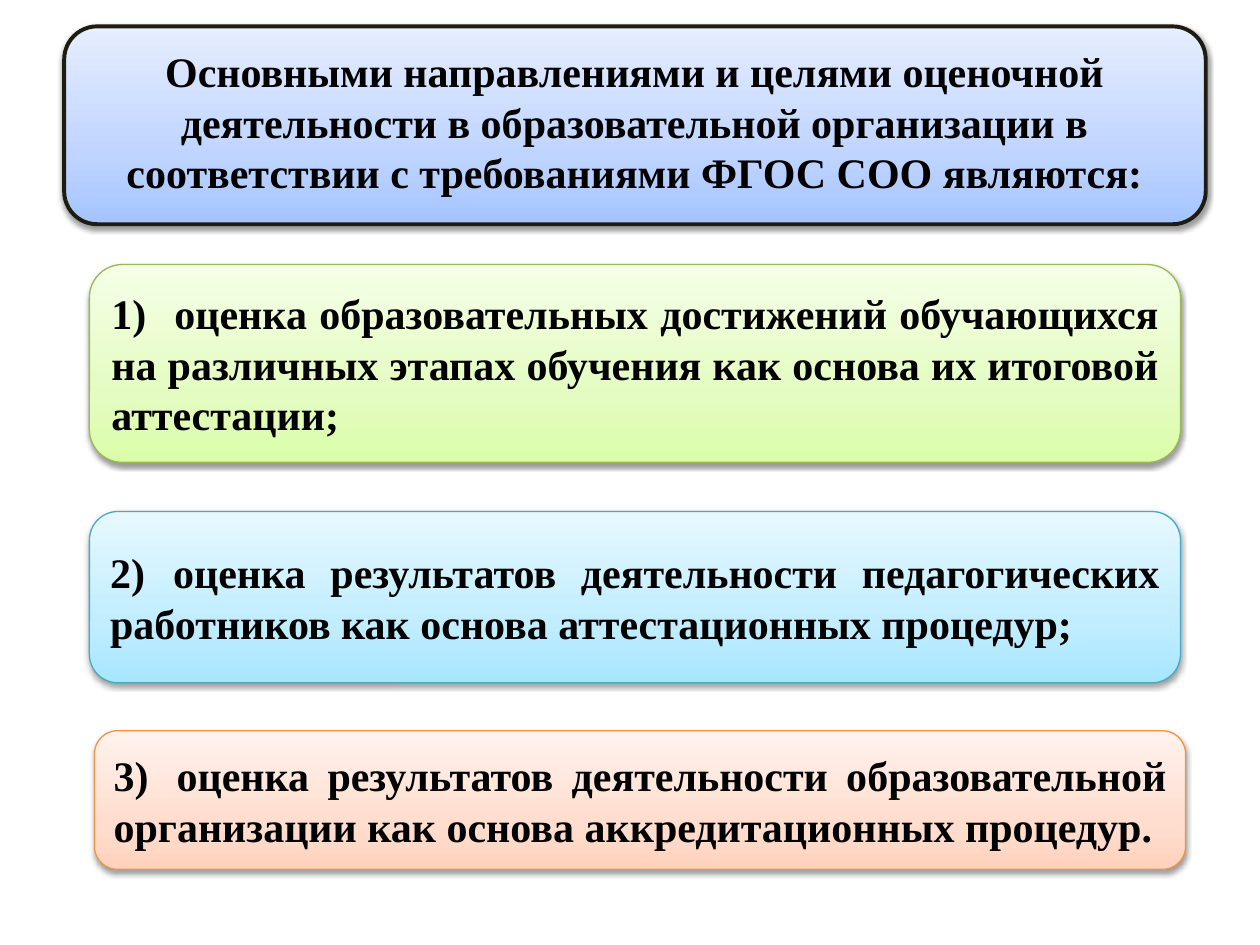
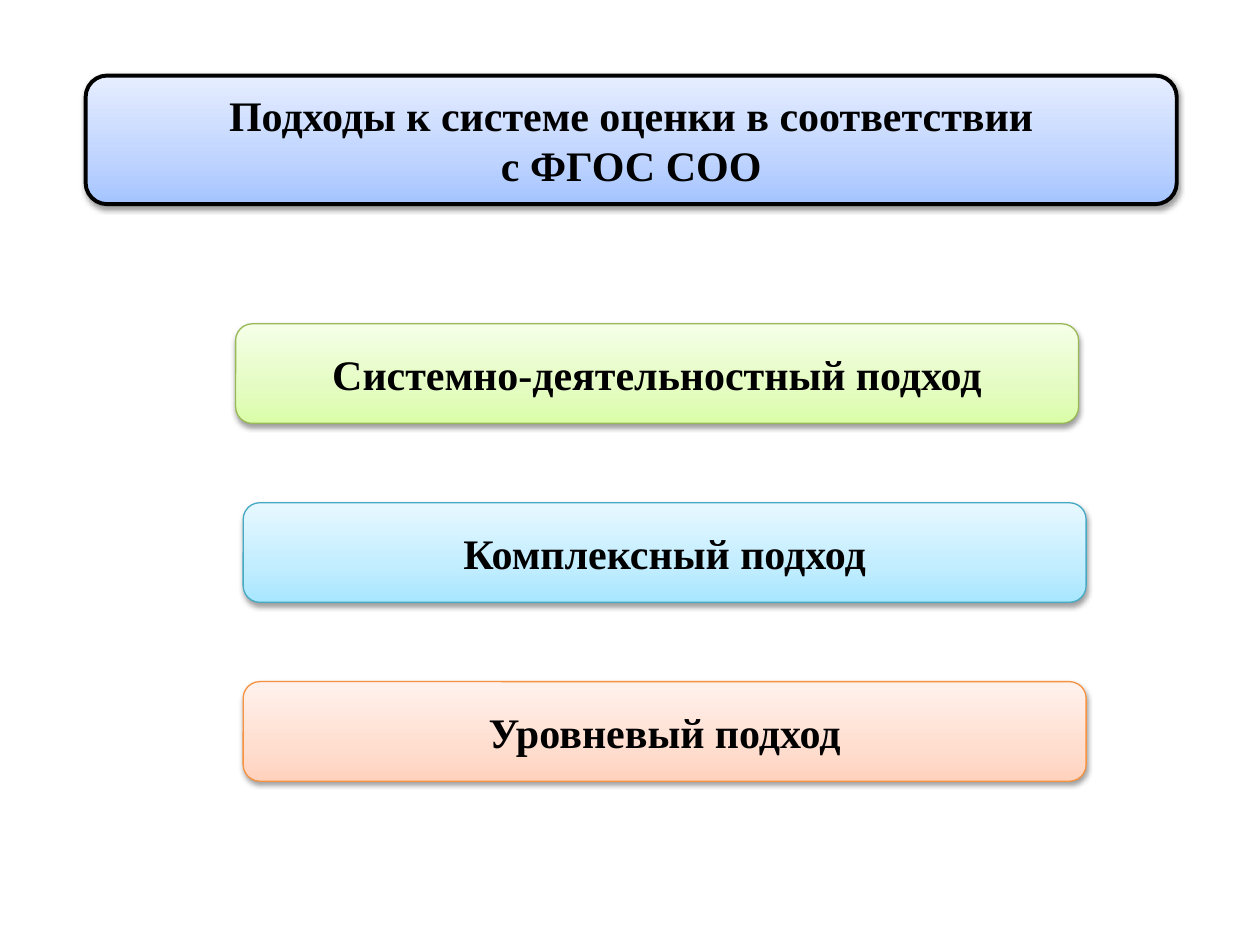
from lxml import etree
from pptx import Presentation
from pptx.dml.color import RGBColor
from pptx.enum.shapes import MSO_SHAPE
from pptx.enum.text import MSO_ANCHOR, MSO_AUTO_SIZE, PP_ALIGN
from pptx.oxml.ns import qn
from pptx.util import Inches, Pt

ROUNDED = MSO_SHAPE.ROUNDED_RECTANGLE
MIDDLE = MSO_ANCHOR.MIDDLE
NO_AUTOFIT = MSO_AUTO_SIZE.NONE
CENTER = PP_ALIGN.CENTER
JUSTIFY = PP_ALIGN.JUSTIFY
TITLE_ONLY = 5

BLUE = ("A4C4FF", "BFD4FF", "E6EEFF")
CARD_STYLES = (
    (("DAFDA7", "E4FCC2", "F5FFE7"), "98B955"),
    (("A7E6FF", "C1EDFF", "E7F8FF"), "46AAC5"),
    (("FFD2BD", "FFDED0", "FFF2ED"), "F69240"),
)
STOP_POSITIONS = (0, 35, 100)
NUMBER_TAB = 0.5


def color(hex_value):
    return RGBColor.from_string(hex_value)


def add_node(parent, tag, **attributes):
    node = etree.SubElement(parent, qn(tag))
    for name, value in attributes.items():
        node.set(name, str(value))
    return node


class Deck:
    font_format = {"name": "Times New Roman", "size": Pt(24), "bold": True}
    frame_format = {"word_wrap": True, "auto_size": NO_AUTOFIT, "vertical_anchor": MIDDLE}

    def __init__(self):
        self.presentation = Presentation()
        self.presentation.slide_width = Inches(10)
        self.presentation.slide_height = Inches(7.5)
        self.slide = None

    def new_slide(self):
        layout = self.presentation.slide_layouts[TITLE_ONLY]
        self.slide = self.presentation.slides.add_slide(layout)

    def set_text(self, shape, text, alignment):
        frame = shape.text_frame
        frame.text = text
        for name, value in self.frame_format.items():
            setattr(frame, name, value)
        for paragraph in frame.paragraphs:
            paragraph.alignment = alignment
            for run in paragraph.runs:
                run.font.color.rgb = color("000000")
                for name, value in self.font_format.items():
                    setattr(run.font, name, value)
            if "\t" in text:
                tabs = add_node(paragraph._p.get_or_add_pPr(), "a:tabLst")
                add_node(tabs, "a:tab", pos=Inches(NUMBER_TAB), algn="l")

    def panel(self, box, gradient, outline, width=0.75):
        shape = self.slide.shapes.add_shape(ROUNDED, *map(Inches, box))
        self.gradient(shape, gradient)
        shape.line.color.rgb = color(outline)
        shape.line.width = Pt(width)
        self.shadow(shape)
        return shape

    def gradient(self, shape, gradient):
        shape.fill.gradient()
        shape.fill.gradient_angle = 90
        stops = shape._element.spPr.find(qn("a:gradFill")).find(qn("a:gsLst"))
        for stop in list(stops):
            stops.remove(stop)
        for position, hex_value in zip(STOP_POSITIONS, gradient):
            stop = add_node(stops, "a:gs", pos=position * 1000)
            add_node(stop, "a:srgbClr", val=hex_value)

    def shadow(self, shape):
        shape.shadow.inherit = False
        effects = shape._element.spPr.find(qn("a:effectLst"))
        outer = add_node(effects, "a:outerShdw", blurRad=Pt(3.1), dist=Pt(1.6),
                         dir=90 * 60000, rotWithShape=0)
        add_node(add_node(outer, "a:srgbClr", val="000000"), "a:alpha", val=38000)

    def title(self, text, band_box, outline, text_box=None):
        self.panel(band_box, BLUE, outline, 2.25)
        title = self.slide.shapes.title
        title.left, title.top, title.width, title.height = map(Inches, text_box or band_box)
        self.set_text(title, text, CENTER)
        title._element.getparent().append(title._element)

    def cards(self, texts, boxes, alignment):
        for text, box, style in zip(texts, boxes, CARD_STYLES):
            self.set_text(self.panel(box, *style), text, alignment)


def build_goals(deck):
    deck.new_slide()
    deck.title(
        "Основными направлениями и целями оценочной деятельности в образовательной "
        "организации в соответствии с требованиями ФГОС СОО являются:",
        (0.51, 0.21, 9.06, 1.57), "1E1C11", (0.35, 0.31, 9.37, 1.31))
    goals = (
        "оценка образовательных достижений обучающихся на различных этапах обучения "
        "как основа их итоговой аттестации;",
        "оценка результатов деятельности педагогических работников как основа "
        "аттестационных процедур;",
        "оценка результатов деятельности образовательной организации как основа "
        "аккредитационных процедур.",
    )
    numbered_goals = [f"{number})\t{goal}" for number, goal in enumerate(goals, 1)]
    boxes = ((0.71, 2.1, 8.66, 1.57), (0.71, 4.06, 8.66, 1.36), (0.75, 5.8, 8.66, 1.1))
    deck.cards(numbered_goals, boxes, JUSTIFY)


def build_approaches(deck):
    deck.new_slide()
    deck.title("Подходы к системе оценки в соответствии\nс ФГОС СОО",
               (0.68, 0.6, 8.66, 1.02), "000000")
    approaches = ("Системно-деятельностный подход", "Комплексный подход", "Уровневый подход")
    boxes = [(left, 2.57 + 1.42 * row, 6.69, 0.79)
             for row, left in enumerate((1.87, 1.93, 1.93))]
    deck.cards(approaches, boxes, CENTER)


def main():
    deck = Deck()
    build_goals(deck)
    build_approaches(deck)
    deck.presentation.save("out.pptx")


if __name__ == "__main__":
    main()
